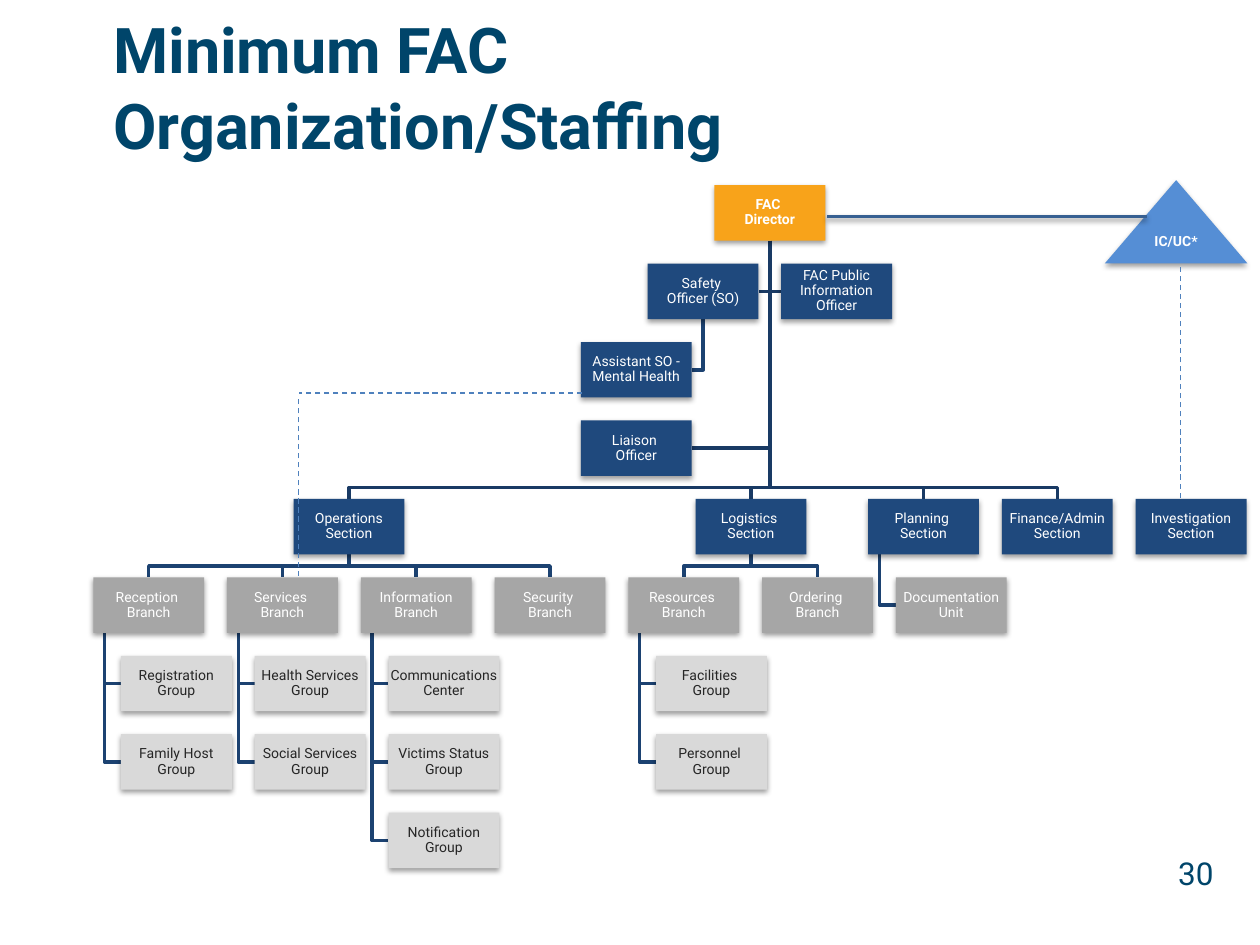
from dataclasses import dataclass

from lxml.etree import SubElement
from pptx import Presentation
from pptx.dml.color import RGBColor
from pptx.enum.dml import MSO_LINE
from pptx.enum.shapes import MSO_CONNECTOR, MSO_SHAPE
from pptx.enum.text import MSO_ANCHOR, PP_ALIGN
from pptx.oxml.ns import qn
from pptx.util import Inches, Pt


@dataclass(frozen=True)
class Theme:
    font: str = "Roboto"
    heading: str = "00456A"
    command_line: str = "193A64"
    section_line: str = "1C4271"
    contact_line: str = "376092"
    dashed_line: str = "4F81BD"
    title_size: int = 36
    number_size: int = 18
    unit_size: int = 8


theme = Theme()
# Unit levels: fill, text colour, bold
LEVELS = {
    "director": ("F8A31A", "FFFFFF", True),
    "command": ("558ED5", "FFFFFF", True),
    "section": ("1F497D", "FFFFFF", False),
    "branch": ("A6A6A6", "FFFFFF", False),
    "group": ("D9D9D9", "262626", False),
}


def write_text(shape, text, size, color, bold, alignment):
    shape.text_frame.word_wrap = True
    paragraph = shape.text_frame.paragraphs[0]
    paragraph.text = text
    paragraph.alignment = alignment
    paragraph.font.name = theme.font
    paragraph.font.size = Pt(size)
    paragraph.font.bold = bold
    paragraph.font.color.rgb = RGBColor.from_string(color)
    return paragraph


def set_effects(shape, shadow):
    properties = shape._element.spPr
    effects = SubElement(properties, qn("a:effectLst"))
    if shadow:
        outer = SubElement(effects, qn("a:outerShdw"), blurRad=str(Pt(3.1)),
                           dist=str(Pt(1.6)), dir="5400000", rotWithShape="0")
        black = SubElement(outer, qn("a:srgbClr"), val="000000")
        SubElement(black, qn("a:alpha"), val="38000")


presentation = Presentation()
presentation.slide_width = Inches(10)
presentation.slide_height = Inches(7.5)
slide = presentation.slides.add_slide(presentation.slide_layouts[6])

# Page number and title
number = slide.shapes.add_textbox(Inches(8.73), Inches(6.73), Inches(1), Inches(0.58))
write_text(number, "30", theme.number_size, theme.heading, False, PP_ALIGN.RIGHT)
title = slide.shapes.add_textbox(Inches(0.8), Inches(0.06), Inches(8.91), Inches(1.25))
title.text_frame.vertical_anchor = MSO_ANCHOR.MIDDLE
write_text(title, "Minimum FAC\nOrganization/Staffing", theme.title_size,
           theme.heading, True, PP_ALIGN.LEFT)

# Chart grid: branches sit on equal columns, groups are indented
BOX_WIDTH, BOX_HEIGHT = 0.88, 0.44
FIRST_TOP, ROW_STEP = 1.47, 4.98 / 8
INDENT, TRUNK, BUS_GAP = 0.22, 0.09, 0.09
column = [0.74 + index * 6.37 / 6 for index in range(9)]

# Units: key, text, left, row, level
units = [
    ("director", "FAC \nDirector", 5.67, 0, "director"),
    ("operations", "Operations Section", 2.33, 4, "section"),
    ("logistics", "Logistics \nSection", 5.52, 4, "section"),
    ("planning", "Planning \nSection", column[6] - INDENT, 4, "section"),
    ("finance", "Finance/Admin Section", column[7] - INDENT, 4, "section"),
    ("investigation", "Investigation Section", column[8] - INDENT, 4, "section"),
    ("safety", "Safety \nOfficer (SO)", 5.14, 1, "section"),
    ("information officer", "FAC Public Information Officer", 6.2, 1, "section"),
    ("assistant", "Assistant SO - Mental Health", 4.61, 2, "section"),
    ("liaison", "Liaison \nOfficer", 4.61, 3, "section"),
]
branches = [
    ("reception", "Reception \nBranch", ["Registration Group", "Family Host\nGroup"]),
    ("services", "Services \nBranch", ["Health Services Group", "Social Services Group"]),
    ("information", "Information Branch",
     ["Communications Center", "Victims Status Group", "Notification Group"]),
    ("security", "Security \nBranch", []),
    ("resources", "Resources \nBranch", ["Facilities \nGroup", "Personnel \nGroup"]),
    ("ordering", "Ordering \nBranch", []),
    ("documentation", "Documentation Unit", []),
]

# Links: parent, child, route
links = [
    ("director", "liaison", "side"),
    ("director", "information officer", "side"),
    ("safety", "assistant", "side"),
    ("director", "safety", "side"),
    ("planning", "documentation", "trunk"),
]
for parent, children in {
    "director": ["operations", "logistics", "planning", "finance"],
    "operations": ["reception", "services", "information", "security"],
    "logistics": ["resources", "ordering"],
}.items():
    links += [(parent, child, "bus") for child in children]
for left, (key, text, groups) in zip(column, branches):
    units.append((key, text, left, 5, "branch"))
    for row, group in enumerate(groups, start=6):
        units.append((group, group, left + INDENT, row, "group"))
        links.append((key, group, "trunk"))

corner = {key: (left, FIRST_TOP + row * ROW_STEP) for key, _, left, row, _ in units}

# Elbow lines behind the units
for parent, child, route in links:
    parent_left, parent_top = corner[parent]
    child_left, child_top = corner[child]
    start_x = parent_left + (TRUNK if route == "trunk" else BOX_WIDTH / 2)
    start_y = parent_top + BOX_HEIGHT
    if route == "bus":
        end_x, bus_y = child_left + BOX_WIDTH / 2, child_top - BUS_GAP
        points = [(start_x, bus_y), (end_x, bus_y), (end_x, child_top)]
    else:
        end_x = child_left if child_left > start_x else child_left + BOX_WIDTH
        middle = child_top + BOX_HEIGHT / 2
        points = [(start_x, middle), (end_x, middle)]
    builder = slide.shapes.build_freeform(Inches(start_x), Inches(start_y))
    builder.add_line_segments([(Inches(x), Inches(y)) for x, y in points], close=False)
    elbow = builder.convert_to_shape()
    elbow.fill.background()
    elbow.line.width = Pt(2)
    elbow.line.color.rgb = RGBColor.from_string(
        theme.command_line if parent == "director" else theme.section_line)
    set_effects(elbow, False)

# Units, with the incident command triangle last
boxes = [(MSO_SHAPE.RECTANGLE, text, *corner[key], BOX_WIDTH, BOX_HEIGHT, level)
         for key, text, _, _, level in units]
boxes.append((MSO_SHAPE.ISOSCELES_TRIANGLE, "IC/UC*", 8.77, 1.43, 1.13, 0.66, "command"))
for kind, text, left, top, width, height, level in boxes:
    fill, color, bold = LEVELS[level]
    box = slide.shapes.add_shape(kind, Inches(left), Inches(top), Inches(width), Inches(height))
    box.fill.solid()
    box.fill.fore_color.rgb = RGBColor.from_string(fill)
    box.line.fill.background()
    set_effects(box, True)
    frame = box.text_frame
    frame.margin_left = frame.margin_right = Inches(0.01)
    frame.margin_top = frame.margin_bottom = Inches(0.01)
    frame.vertical_anchor = MSO_ANCHOR.MIDDLE
    paragraph = write_text(box, text, theme.unit_size, color, bold, PP_ALIGN.CENTER)
    paragraph.line_spacing = 0.9

# Contact line to incident command and dashed coordination lines
for start_x, start_y, end_x, end_y, dashed in [
    (9.1, 1.72, 6.56, 1.72, False),
    (4.62, 3.12, 2.37, 3.12, True),
    (2.37, 4.57, 2.37, 3.16, True),
    (9.37, 3.95, 9.37, 2.09, True),
]:
    line = slide.shapes.add_connector(MSO_CONNECTOR.STRAIGHT, Inches(start_x), Inches(start_y),
                                      Inches(end_x), Inches(end_y))
    line.line.width = Pt(0.75 if dashed else 2)
    line.line.color.rgb = RGBColor.from_string(
        theme.dashed_line if dashed else theme.contact_line)
    if dashed:
        line.line.dash_style = MSO_LINE.DASH
    set_effects(line, not dashed)

presentation.save("out.pptx")
